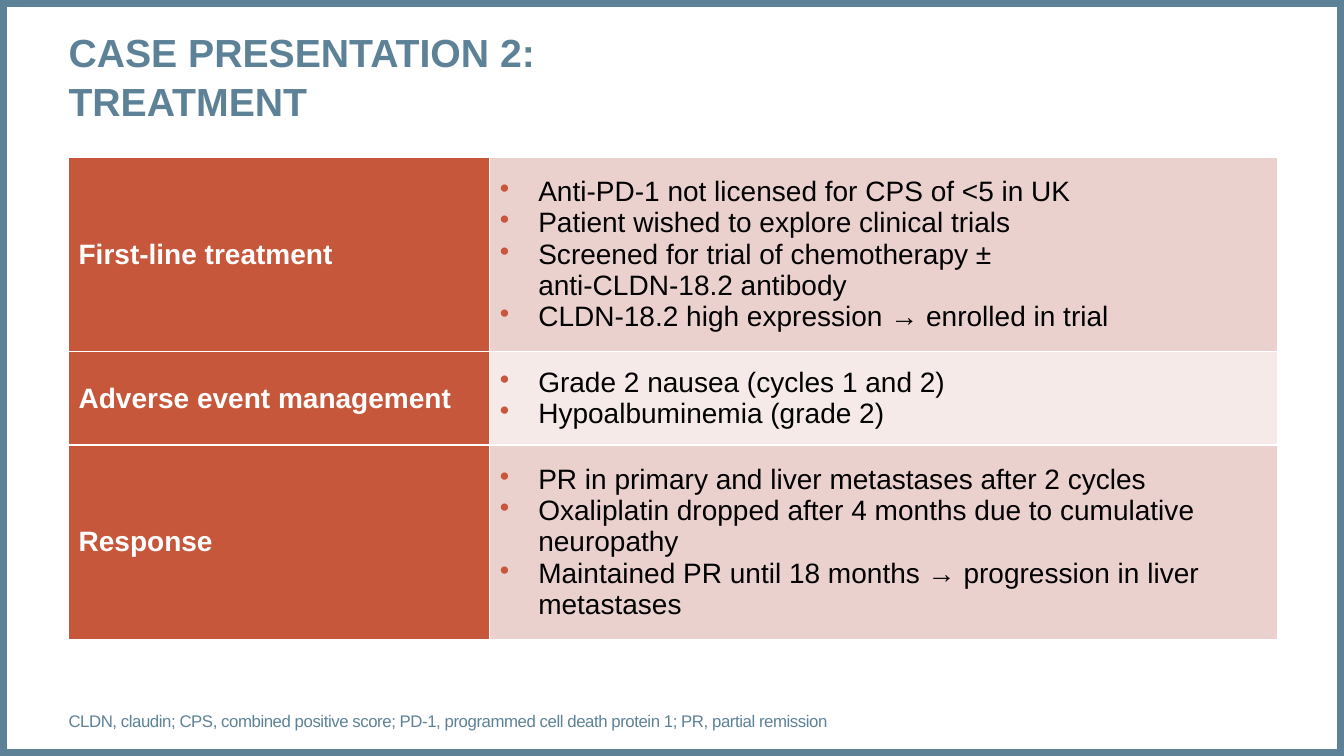
from dataclasses import dataclass

from lxml import etree
from pptx import Presentation, util as u
from pptx.dml.color import RGBColor
from pptx.enum import shapes, text
from pptx.oxml.ns import qn


@dataclass(frozen=True)
class Theme:
    font: str = "Arial"
    slate: str = "5D8298"
    rust: str = "C6573B"
    bands: tuple = ("EAD1CE", "F5EAE8")
    white: str = "FFFFFF"
    black: str = "000000"
    title_size: int = 28
    table_size: int = 20
    note_size: int = 12


class Deck:
    """Holds the theme and current slide; lengths are percent of the slide."""

    def __init__(self, theme):
        self.theme = theme
        self.prs = Presentation()
        self.prs.slide_width = u.Inches(13.33)
        self.prs.slide_height = u.Inches(7.5)
        self.slide = self.prs.slides.add_slide(self.prs.slide_layouts[2])

    def x(self, percent):
        return round(self.prs.slide_width * percent / 100)

    def y(self, percent):
        return round(self.prs.slide_height * percent / 100)

    def box(self, left, top, width, height):
        return self.x(left), self.y(top), self.x(width), self.y(height)

    def style(self, paragraph, size, color, bold=False):
        font = paragraph.font
        font.name, font.size, font.bold = self.theme.font, u.Pt(size), bold
        font.color.rgb = RGBColor.from_string(color)

    def frame(self, color, weight):
        border = self.slide.shapes.add_shape(
            shapes.MSO_SHAPE.RECTANGLE, *self.box(0, 0, 100, 100))
        border.shadow.inherit = False
        border.fill.background()
        border.line.color.rgb = RGBColor.from_string(color)
        border.line.width = u.Pt(weight)

    def placeholder(self, index, area, words, size, color, bold=False,
                    grow=False, line_spacing=1.0, tracking=0):
        holder = self.slide.placeholders[index]
        holder.left, holder.top, holder.width, holder.height = self.box(*area)
        body = holder.text_frame
        body.margin_left = body.margin_right = 0
        body.margin_top = body.margin_bottom = 0
        body.word_wrap = True
        body.vertical_anchor = text.MSO_ANCHOR.MIDDLE
        sizing = text.MSO_AUTO_SIZE
        body.auto_size = sizing.SHAPE_TO_FIT_TEXT if grow else sizing.NONE
        body.text = words
        paragraph = body.paragraphs[0]
        paragraph.alignment = text.PP_ALIGN.LEFT
        paragraph.space_before = u.Pt(0)
        paragraph.line_spacing = line_spacing
        self.style(paragraph, size, color, bold)
        if tracking:
            for run in paragraph.runs:
                run.font._element.set("spc", str(tracking)) if hasattr(
                    run.font, "_element") else run._r.get_or_add_rPr().set(
                    "spc", str(tracking))

    def bullet(self, paragraph, color, indent):
        props = paragraph._p.get_or_add_pPr()
        props.set("marL", str(indent))
        props.set("indent", str(-indent))
        tint = etree.SubElement(props, qn("a:buClr"))
        etree.SubElement(tint, qn("a:srgbClr"), val=color)
        etree.SubElement(props, qn("a:buChar"), char="•")

    def cell(self, cell, lines, fill, color, bold=False, bulleted=False):
        cell.margin_left = cell.margin_right = u.Inches(0.1)
        cell.margin_top = cell.margin_bottom = u.Inches(0.13)
        cell.vertical_anchor = text.MSO_ANCHOR.MIDDLE
        # Thin white borders come before the fill
        props = cell._tc.get_or_add_tcPr()
        for side in ("lnL", "lnR", "lnT", "lnB"):
            edge = etree.SubElement(props, qn(f"a:{side}"), w=str(u.Pt(1)))
            paint = etree.SubElement(edge, qn("a:solidFill"))
            etree.SubElement(paint, qn("a:srgbClr"), val=self.theme.white)
        cell.fill.solid()
        cell.fill.fore_color.rgb = RGBColor.from_string(fill)
        cell.text = "\n".join(lines)
        for paragraph in cell.text_frame.paragraphs:
            if bulleted:
                self.bullet(paragraph, self.theme.rust, u.Inches(0.38))
            self.style(paragraph, self.theme.table_size, color, bold)

    def table(self, left, top, columns, heights, topics):
        theme = self.theme
        area = self.box(left, top, sum(columns), sum(heights))
        grid = self.slide.shapes.add_table(
            len(topics), len(columns), *area).table
        grid.first_row = grid.horz_banding = False
        for column, width in zip(grid.columns, columns):
            column.width = self.x(width)
        for row, (topic, points) in enumerate(topics.items()):
            grid.rows[row].height = self.y(heights[row])
            self.cell(grid.cell(row, 0), [topic], theme.rust, theme.white,
                      bold=True)
            self.cell(grid.cell(row, 1), points, theme.bands[row % 2],
                      theme.black, bulleted=True)


TOPICS = {
    "First-line treatment": [
        "Anti-PD-1 not licensed for CPS of <5 in UK",
        "Patient wished to explore clinical trials",
        "Screened for trial of chemotherapy ±\vanti-CLDN-18.2 antibody",
        "CLDN-18.2 high expression → enrolled in trial",
    ],
    "Adverse event management": [
        "Grade 2 nausea (cycles 1 and 2)",
        "Hypoalbuminemia (grade 2)",
    ],
    "Response": [
        "PR in primary and liver metastases after 2 cycles",
        "Oxaliplatin dropped after 4 months due to cumulative neuropathy",
        "Maintained PR until 18 months → progression in liver metastases",
    ],
}
LEFT = 5.1


def main():
    theme = Theme()
    deck = Deck(theme)

    # Slide border
    deck.frame(theme.slate, 10)

    # Title
    deck.placeholder(0, (LEFT, 3.73, 89.95, 12.53),
                     "CASE PRESENTATION 2:\vTREATMENT",
                     theme.title_size, theme.slate, bold=True,
                     line_spacing=1.04)

    # Treatment table
    deck.table(LEFT, 20.8, (31.35, 58.6), (24, 11.7, 24), TOPICS)

    # Abbreviations
    deck.placeholder(1, (LEFT, 94, 83.5, 2.67),
                     "CLDN, claudin; CPS, combined positive score; PD-1, "
                     "programmed cell death protein 1; PR, partial remission",
                     theme.note_size, theme.slate, grow=True, tracking=-30)

    deck.prs.save("out.pptx")


if __name__ == "__main__":
    main()
